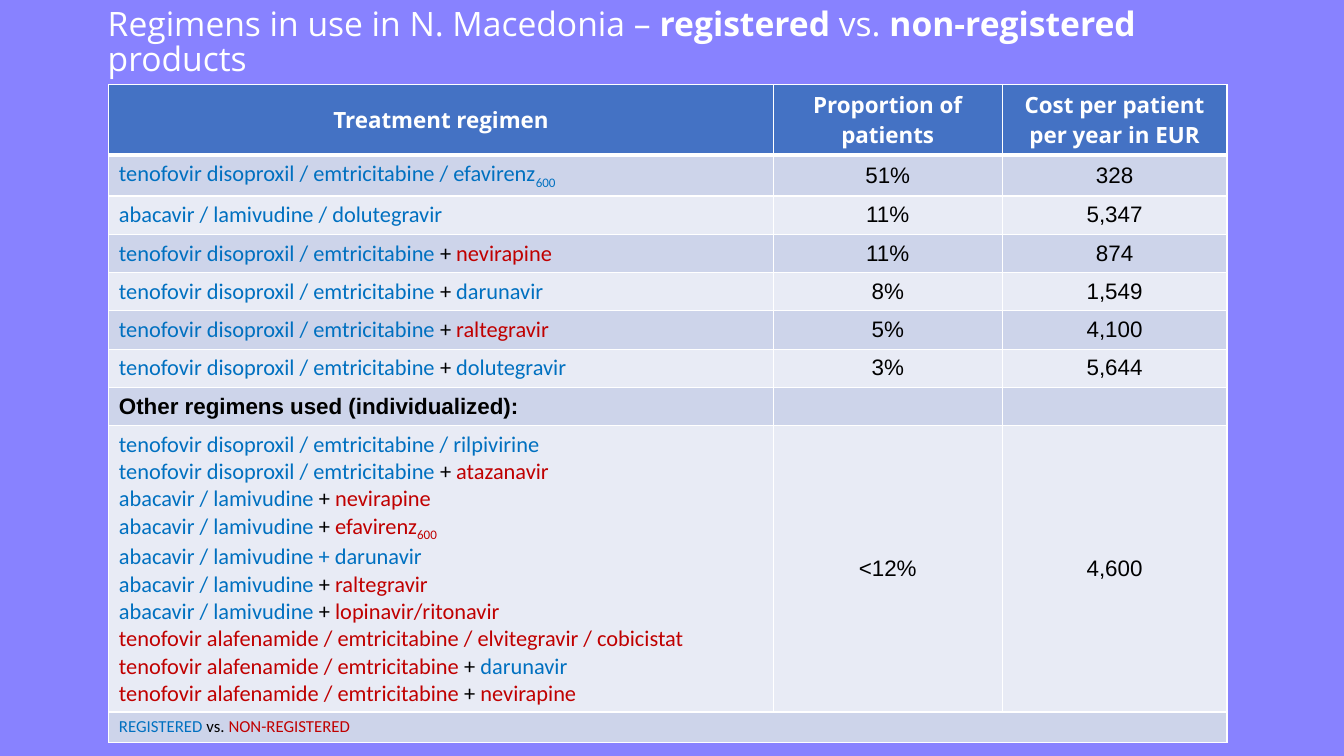
from dataclasses import dataclass

from lxml.etree import SubElement
from pptx import Presentation
from pptx.dml.color import RGBColor
from pptx.enum.text import MSO_ANCHOR, PP_ALIGN
from pptx.oxml.ns import qn
from pptx.slide import Slide
from pptx.table import _Cell
from pptx.text.text import _Paragraph
from pptx.util import Inches, Pt

COLORS = {
    "page": "8882FF",
    "white": "FFFFFF",
    "head": "4472C4",
    "dark": "CDD4EA",
    "light": "E8EBF5",
    "blue": "0070C0",
    "red": "C00000",
    "black": "000000",
}
STYLES = {
    "title": {"size": Pt(24), "name": "Open Sans", "bold": False},
    "strong": {"size": Pt(24), "name": "Open Sans", "bold": True},
    "head": {"size": Pt(16), "name": "Open Sans", "bold": True},
    "drug": {"size": Pt(16), "name": "Calibri", "bold": False},
    "value": {"size": Pt(16), "name": "Arial", "bold": False},
    "label": {"size": Pt(16), "name": "Arial", "bold": True},
    "key": {"size": Pt(12), "name": "Calibri", "bold": False},
}


@dataclass
class Part:
    text: str
    color: str
    style: str = "drug"
    sub: bool = False


@dataclass
class Row:
    lines: list[list[Part]]
    share: str = ""
    cost: str = ""
    height: float = 0.38


def combo(base: str, drug: str, tone: str, root: str = "blue") -> list[Part]:
    return [Part(f"{base} ", root), Part("+ ", "black"), Part(drug, tone)]


def dose(tone: str) -> Part:
    return Part("600", tone, sub=True)


TENO = "tenofovir disoproxil / emtricitabine"
ALAF = "tenofovir alafenamide / emtricitabine"
ABAC = "abacavir / lamivudine"

TITLE = [
    Part("Regimens in use in N. Macedonia – ", "white", "title"),
    Part("registered", "white", "strong"),
    Part(" vs. ", "white", "title"),
    Part("non-registered", "white", "strong"),
    Part(" products", "white", "title"),
]
HEADS = ["Treatment regimen", "Proportion of patients", "Cost per patient per year in EUR"]
OTHERS = [
    [Part(f"{TENO} / rilpivirine", "blue")],
    combo(TENO, "atazanavir", "red"),
    combo(ABAC, "nevirapine", "red"),
    combo(ABAC, "efavirenz", "red") + [dose("red")],
    [Part(f"{ABAC} + darunavir", "blue")],
    combo(ABAC, "raltegravir", "red"),
    combo(ABAC, "lopinavir/ritonavir", "red"),
    [Part(f"{ALAF} / elvitegravir / cobicistat", "red")],
    combo(ALAF, "darunavir", "blue", "red"),
    combo(ALAF, "nevirapine", "red", "red"),
]
LEGEND = [
    Part("REGISTERED ", "blue", "key"),
    Part("vs. ", "black", "key"),
    Part("NON-REGISTERED", "red", "key"),
]
ROWS = [
    Row([[Part(f"{TENO} / efavirenz", "blue"), dose("blue")]], "51%", "328"),
    Row([[Part(f"{ABAC} / dolutegravir", "blue")]], "11%", "5,347"),
    Row([combo(TENO, "nevirapine", "red")], "11%", "874"),
    Row([combo(TENO, "darunavir", "blue")], "8%", "1,549"),
    Row([combo(TENO, "raltegravir", "red")], "5%", "4,100"),
    Row([combo(TENO, "dolutegravir", "blue")], "3%", "5,644"),
    Row([[Part("Other regimens used (individualized):", "black", "label")]]),
    Row(OTHERS, "<12%", "4,600", 2.84),
    Row([LEGEND], height=0.3),
]
WIDTHS = [6.59, 2.27, 2.23]
TOP = 0.7


def tint(name: str) -> RGBColor:
    return RGBColor.from_string(COLORS[name])


def write(para: _Paragraph, parts: list[Part]) -> None:
    for part in parts:
        run = para.add_run()
        run.text = part.text
        for key, value in STYLES[part.style].items():
            setattr(run.font, key, value)
        run.font.color.rgb = tint(part.color)
        if part.sub:
            run.font._element.set("baseline", "-25000")


def border(cell: _Cell, sides: dict[str, float]) -> None:
    props = cell._tc.get_or_add_tcPr()
    for side, width in sides.items():
        line = SubElement(props, qn(f"a:ln{side}"), w=str(Pt(width)))
        fill = SubElement(line, qn("a:solidFill"))
        SubElement(fill, qn("a:srgbClr"), val=COLORS["white"])


def paint(cell: _Cell, lines: list[list[Part]], fill: str, align: PP_ALIGN,
          over: float = 1, under: float = 1) -> None:
    border(cell, {"L": 1, "R": 1, "T": over, "B": under})
    cell.fill.solid()
    cell.fill.fore_color.rgb = tint(fill)
    cell.vertical_anchor = MSO_ANCHOR.MIDDLE
    frame = cell.text_frame
    if not lines:
        SubElement(frame.paragraphs[0]._p, qn("a:endParaRPr"), sz="1200")
    for spot, parts in enumerate(lines):
        para = frame.add_paragraph() if spot else frame.paragraphs[0]
        para.alignment = align
        write(para, parts)


def add_title(slide: Slide) -> None:
    box = slide.shapes.add_textbox(Inches(0.97), Inches(0.11), Inches(11.45), Inches(0.64))
    frame = box.text_frame
    frame.word_wrap = True
    frame.vertical_anchor = MSO_ANCHOR.MIDDLE
    para = frame.paragraphs[0]
    para.line_spacing = 0.88
    write(para, TITLE)


def add_grid(slide: Slide) -> None:
    tall = TOP + sum(row.height for row in ROWS)
    grid = slide.shapes.add_table(
        len(ROWS) + 1, len(WIDTHS), Inches(1.08), Inches(0.84),
        Inches(sum(WIDTHS)), Inches(tall)).table
    for column, width in zip(grid.columns, WIDTHS):
        column.width = Inches(width)
    grid.rows[0].height = Inches(TOP)
    for spot, text in enumerate(HEADS):
        paint(grid.cell(0, spot), [[Part(text, "white", "head")]], "head",
              PP_ALIGN.CENTER, under=3)
    for line, row in enumerate(ROWS, 1):
        grid.rows[line].height = Inches(row.height)
        fill = "dark" if line % 2 else "light"
        over = 3 if line == 1 else 1
        paint(grid.cell(line, 0), row.lines, fill, PP_ALIGN.LEFT, over)
        for spot, text in enumerate((row.share, row.cost), 1):
            lines = [[Part(text, "black", "value")]] if text else []
            paint(grid.cell(line, spot), lines, fill, PP_ALIGN.CENTER, over)
    last = len(ROWS)
    grid.cell(last, 0).merge(grid.cell(last, len(WIDTHS) - 1))


def main() -> None:
    deck = Presentation()
    deck.slide_width = Inches(13.33)
    deck.slide_height = Inches(7.5)
    slide = deck.slides.add_slide(deck.slide_layouts[6])
    slide.background.fill.solid()
    slide.background.fill.fore_color.rgb = tint("page")
    add_title(slide)
    add_grid(slide)
    deck.save("out.pptx")


if __name__ == "__main__":
    main()
